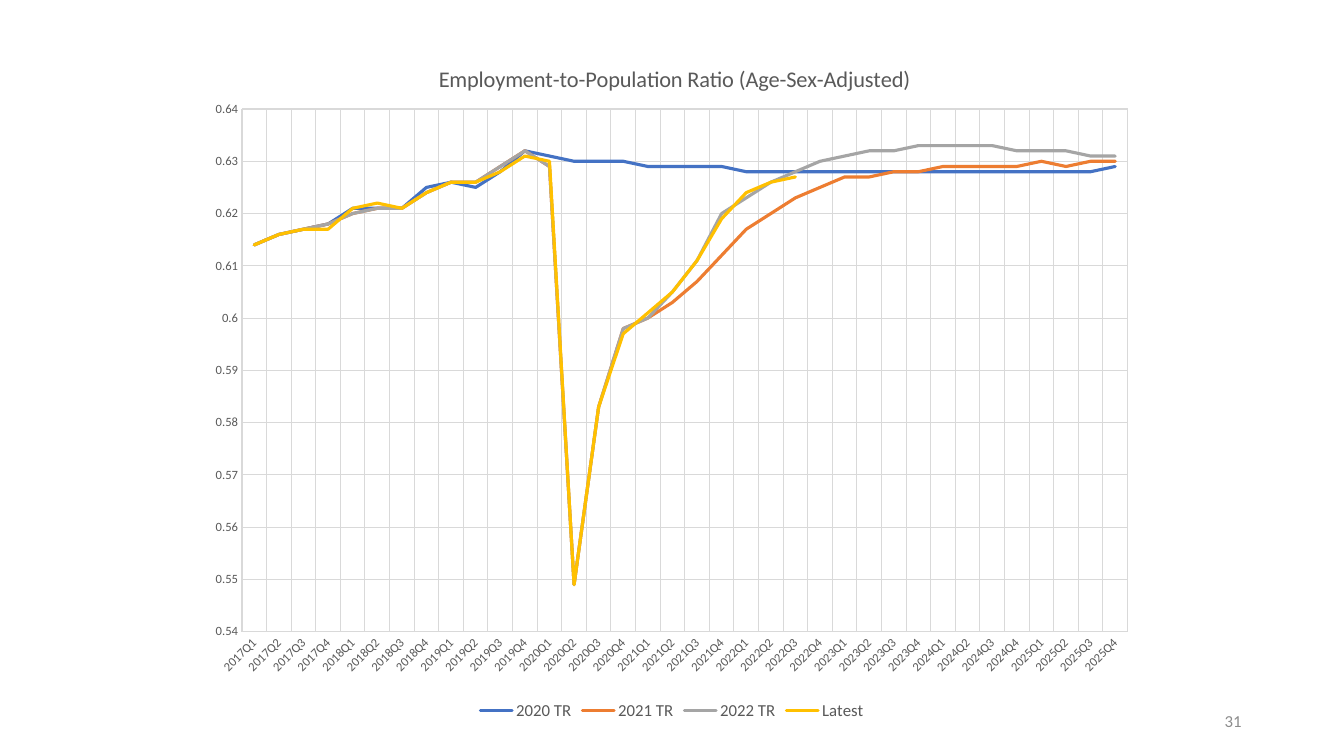
import pptx
import pptx.chart.data
import pptx.dml.color
import pptx.enum.chart
import pptx.enum.text
import pptx.oxml
import pptx.oxml.ns
import pptx.util
from dataclasses import dataclass

Pt = pptx.util.Pt
qn = pptx.oxml.ns.qn
enum = pptx.enum.chart


@dataclass(frozen=True)
class Theme:
    font: str = "Calibri"
    text: str = "595959"
    page: str = "8C8C8C"
    grid: str = "D9D9D9"
    lines: tuple = ("4472C4", "ED7D31", "A5A5A5", "FFC000")
    title_size: float = 16
    key_size: float = 12
    axis_size: float = 9
    page_size: float = 12
    thick: float = 2.25
    thin: float = 0.75


THEME = Theme()
TITLE = "Employment-to-Population Ratio (Age-Sex-Adjusted)"
QUARTERS = [f"{year}Q{part}" for year in range(2017, 2026) for part in range(1, 5)]

# One row per calendar year, four quarters each
RATIOS = {
    "2020 TR": [
        0.614, 0.616, 0.617, 0.618,
        0.621, 0.621, 0.621, 0.625,
        0.626, 0.625, 0.628, 0.632,
        0.631, 0.63, 0.63, 0.63,
        0.629, 0.629, 0.629, 0.629,
        0.628, 0.628, 0.628, 0.628,
        0.628, 0.628, 0.628, 0.628,
        0.628, 0.628, 0.628, 0.628,
        0.628, 0.628, 0.628, 0.629,
    ],
    "2021 TR": [
        0.614, 0.616, 0.617, 0.618,
        0.62, 0.621, 0.621, 0.624,
        0.626, 0.626, 0.629, 0.632,
        0.629, 0.549, 0.583, 0.598,
        0.6, 0.603, 0.607, 0.612,
        0.617, 0.62, 0.623, 0.625,
        0.627, 0.627, 0.628, 0.628,
        0.629, 0.629, 0.629, 0.629,
        0.63, 0.629, 0.63, 0.63,
    ],
    "2022 TR": [
        0.614, 0.616, 0.617, 0.618,
        0.62, 0.621, 0.621, 0.624,
        0.626, 0.626, 0.629, 0.632,
        0.629, 0.549, 0.583, 0.598,
        0.6, 0.605, 0.611, 0.62,
        0.623, 0.626, 0.628, 0.63,
        0.631, 0.632, 0.632, 0.633,
        0.633, 0.633, 0.633, 0.632,
        0.632, 0.632, 0.631, 0.631,
    ],
    "Latest": [
        0.614, 0.616, 0.617, 0.617,
        0.621, 0.622, 0.621, 0.624,
        0.626, 0.626, 0.628, 0.631,
        0.63, 0.549, 0.583, 0.597,
        0.601, 0.605, 0.611, 0.619,
        0.624, 0.626, 0.627,
    ],
}


def style(font, size, color):
    font.name = THEME.font
    font.size = Pt(size)
    font.bold = False
    font.color.rgb = pptx.dml.color.RGBColor.from_string(color)


def stroke(line, width, color):
    line.width = Pt(width)
    line.color.rgb = pptx.dml.color.RGBColor.from_string(color)


def settle(owner, index, **parts):
    """Fix the layout of a chart part, in fractions of the chart."""
    old = owner.find(qn("c:layout"))
    if old is not None:
        owner.remove(old)
    rows = "".join(f'<c:{name} val="{value}"/>' for name, value in parts.items())
    owner.insert(index, pptx.oxml.parse_xml(
        f'<c:layout {pptx.oxml.ns.nsdecls("c")}>'
        f"<c:manualLayout>{rows}</c:manualLayout></c:layout>"))


def add_head(chart):
    chart.has_title = True
    title = chart.chart_title
    para = title.text_frame.paragraphs[0]
    para.text = TITLE
    style(para.font, THEME.title_size, THEME.text)
    settle(title._element, 1, xMode="edge", yMode="edge", x=0.25, y=0.04)


def add_axes(chart):
    for axis in (chart.category_axis, chart.value_axis):
        axis.major_tick_mark = enum.XL_TICK_MARK.NONE
        axis.minor_tick_mark = enum.XL_TICK_MARK.NONE
        axis.has_major_gridlines = True
        stroke(axis.major_gridlines.format.line, THEME.thin, THEME.grid)
        style(axis.tick_labels.font, THEME.axis_size, THEME.text)

    # Quarters run slantwise below the plot
    quarters, ratio = chart.category_axis, chart.value_axis
    stroke(quarters.format.line, THEME.thin, THEME.grid)
    body = quarters._element.find(qn("c:txPr")).find(qn("a:bodyPr"))
    body.set("rot", "-2700000")
    body.set("vert", "horz")

    ratio.format.line.fill.background()
    ratio.minimum_scale = 0.54
    ratio.maximum_scale = 0.64
    ratio.major_unit = 0.01
    ratio.tick_labels.number_format = "General"
    ratio.tick_labels.number_format_is_linked = False


def add_key(chart):
    chart.has_legend = True
    chart.legend.position = enum.XL_LEGEND_POSITION.BOTTOM
    chart.legend.include_in_layout = False
    style(chart.legend.font, THEME.key_size, THEME.text)


def add_graph(slide, left, top, width, height):
    data = pptx.chart.data.CategoryChartData(number_format="General")
    data.categories = QUARTERS
    for name, values in RATIOS.items():
        data.add_series(name, values + [None] * (len(QUARTERS) - len(values)))
    chart = slide.shapes.add_chart(
        enum.XL_CHART_TYPE.LINE, left, top, width, height, data).chart
    chart.font.name = THEME.font
    add_head(chart)
    add_axes(chart)
    add_key(chart)

    # Lines with round ends
    plot = chart.plots[0]
    plot.vary_by_categories = False
    for series, color in zip(plot.series, THEME.lines):
        series.smooth = False
        series.marker.style = enum.XL_MARKER_STYLE.NONE
        stroke(series.format.line, THEME.thick, color)
        series._element.find(qn("c:spPr")).find(qn("a:ln")).set("cap", "rnd")

    area = chart._chartSpace.chart.plotArea
    settle(area, 0, layoutTarget="inner", xMode="edge", yMode="edge",
           x=0.047, y=0.111, w=0.933, h=0.755)


def add_page(slide, left, top, width, height):
    frame = slide.shapes.add_textbox(left, top, width, height).text_frame
    frame.word_wrap = True
    frame.vertical_anchor = pptx.enum.text.MSO_ANCHOR.MIDDLE
    para = frame.paragraphs[0]
    para.text = "31"
    para.alignment = pptx.enum.text.PP_ALIGN.RIGHT
    style(para.font, THEME.page_size, THEME.page)


def main():
    deck = pptx.Presentation()
    deck.slide_width, deck.slide_height = Pt(960), Pt(540)
    slide = deck.slides.add_slide(deck.slide_layouts[6])
    add_page(slide, Pt(678), Pt(500.5), Pt(216), Pt(28.8))
    add_graph(slide, Pt(141), Pt(23), Pt(678), Pt(494.6))
    deck.save("out.pptx")


if __name__ == "__main__":
    main()
